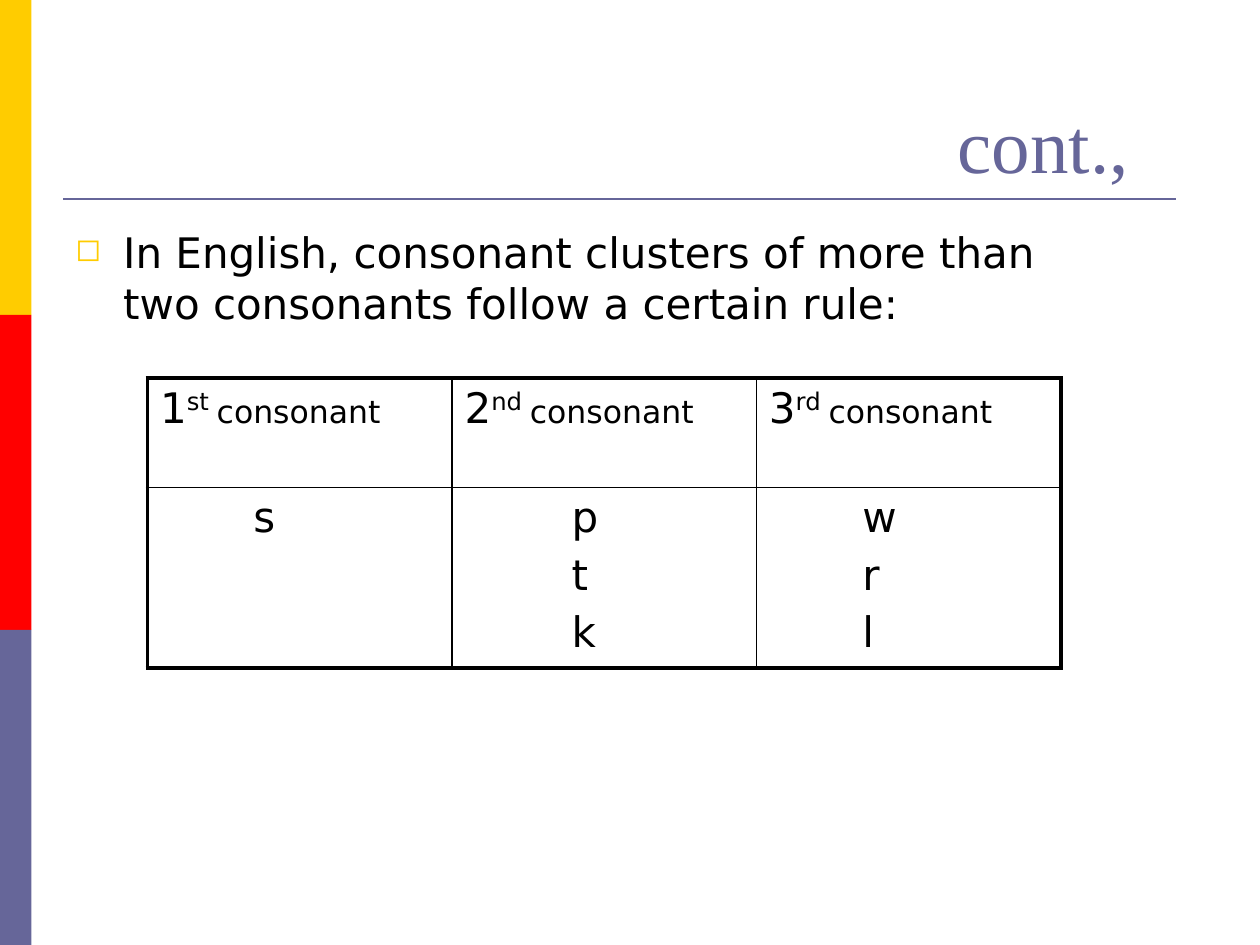
from lxml.etree import SubElement
from pptx import Presentation
from pptx.dml.color import RGBColor
from pptx.enum.shapes import MSO_CONNECTOR, MSO_SHAPE
from pptx.enum.text import MSO_ANCHOR, MSO_AUTO_SIZE, PP_ALIGN
from pptx.oxml.ns import qn
from pptx.util import Inches, Pt

YELLOW = RGBColor(0xFF, 0xCC, 0x00)
RED = RGBColor(0xFF, 0x00, 0x00)
PURPLE = RGBColor(0x66, 0x66, 0x99)
BLACK = RGBColor(0x00, 0x00, 0x00)

TITLE = "cont.,"
RULE_TEXT = "In English, consonant clusters of more than two consonants follow a certain rule:"
BANDS = [YELLOW, RED, PURPLE]
COLUMNS = [
    {"ordinal": ("1", "st "), "sounds": ["s"], "indent": 0.74},
    {"ordinal": ("2", "nd "), "sounds": ["p", "t", "k"], "indent": 0.85},
    {"ordinal": ("3", "rd "), "sounds": ["w", "r", "l"], "indent": 0.74},
]
ROW_HEIGHTS = [0.87, 1.4]
BODY = {"name": "DejaVu Sans", "size": Pt(24)}
LABEL = {"name": "DejaVu Sans", "size": Pt(18)}
HEADING = {"name": "Times New Roman", "size": Pt(44)}


def add_run(paragraph, text, style, color=BLACK):
    run = paragraph.add_run()
    run.text = text
    for name, value in style.items():
        setattr(run.font, name, value)
    run.font.color.rgb = color
    return run


def set_indent(paragraph, left, first=0):
    properties = paragraph._p.get_or_add_pPr()
    properties.set("marL", str(Inches(left)))
    properties.set("indent", str(Inches(first)))
    return properties


def set_borders(cell, widths):
    properties = cell._tc.get_or_add_tcPr()
    for position, (tag, width) in enumerate(widths.items()):
        line = properties.makeelement(qn(f"a:{tag}"), {"w": str(Pt(width))})
        properties.insert(position, line)
        fill = SubElement(line, qn("a:solidFill"))
        SubElement(fill, qn("a:srgbClr"), val=str(BLACK))


def add_bands(slide):
    height = 7.5 / len(BANDS)
    for index, color in enumerate(BANDS):
        band = slide.shapes.add_shape(
            MSO_SHAPE.RECTANGLE, 0, Inches(index * height), Inches(0.25), Inches(height))
        band.shadow.inherit = False
        band.fill.solid()
        band.fill.fore_color.rgb = color
        band.line.fill.background()


def add_title(slide):
    title = slide.shapes.title
    title.left, title.top, title.width, title.height = map(Inches, (0.5, 0.3, 9, 1.25))
    frame = title.text_frame
    frame.auto_size = MSO_AUTO_SIZE.NONE
    frame.vertical_anchor = MSO_ANCHOR.BOTTOM
    paragraph = frame.paragraphs[0]
    paragraph.alignment = PP_ALIGN.LEFT
    paragraph.line_spacing = 1.0
    set_indent(paragraph, 7)
    add_run(paragraph, TITLE, HEADING, PURPLE)

    rule = slide.shapes.add_connector(
        MSO_CONNECTOR.STRAIGHT, Inches(0.5), Inches(1.58), Inches(9.33), Inches(1.58))
    rule.line.color.rgb = PURPLE
    rule.line.width = Pt(1.5)
    SubElement(rule._element.spPr, qn("a:effectLst"))


def add_statement(slide):
    box = slide.shapes.add_textbox(Inches(0.5), Inches(1.75), Inches(8.17), Inches(1.1))
    box.text_frame.word_wrap = True
    paragraph = box.text_frame.paragraphs[0]
    paragraph.space_before = Pt(4.8)
    properties = set_indent(paragraph, 0.38, -0.38)
    color = SubElement(properties, qn("a:buClr"))
    SubElement(color, qn("a:srgbClr"), val=str(YELLOW))
    SubElement(properties, qn("a:buSzPct"), val="75000")
    SubElement(properties, qn("a:buChar"), char="◻")
    add_run(paragraph, RULE_TEXT, BODY)


def fill_heading(cell, column):
    number, suffix = column["ordinal"]
    paragraph = cell.text_frame.paragraphs[0]
    paragraph.space_before = Pt(4.8)
    add_run(paragraph, number, BODY)
    raised = add_run(paragraph, suffix, BODY)
    raised.font._element.set("baseline", "30000")
    add_run(paragraph, "consonant", LABEL)


def fill_sounds(cell, column):
    frame = cell.text_frame
    for index, sound in enumerate(column["sounds"]):
        paragraph = frame.add_paragraph() if index else frame.paragraphs[0]
        paragraph.space_before = Pt(4.8)
        set_indent(paragraph, column["indent"])
        add_run(paragraph, sound, BODY)


def add_clusters(slide):
    rows, columns = len(ROW_HEIGHTS), len(COLUMNS)
    table = slide.shapes.add_table(
        rows, columns, Inches(1.17), Inches(3), Inches(7.25), Inches(sum(ROW_HEIGHTS))).table
    table.first_row = table.horz_banding = False
    for row, height in zip(table.rows, ROW_HEIGHTS):
        row.height = Inches(height)
    for x, column in enumerate(COLUMNS):
        for y, fill_text in enumerate((fill_heading, fill_sounds)):
            cell = table.cell(y, x)
            cell.fill.background()
            fill_text(cell, column)
            edges = {"lnL": x == 0, "lnR": x == columns - 1, "lnT": y == 0, "lnB": y == rows - 1}
            set_borders(cell, {tag: 2.25 if outer else 1 for tag, outer in edges.items()})


def main():
    presentation = Presentation()
    presentation.slide_width, presentation.slide_height = Inches(10), Inches(7.5)
    slide = presentation.slides.add_slide(presentation.slide_layouts[5])
    add_bands(slide)
    add_title(slide)
    add_statement(slide)
    add_clusters(slide)
    presentation.save("out.pptx")


if __name__ == "__main__":
    main()
